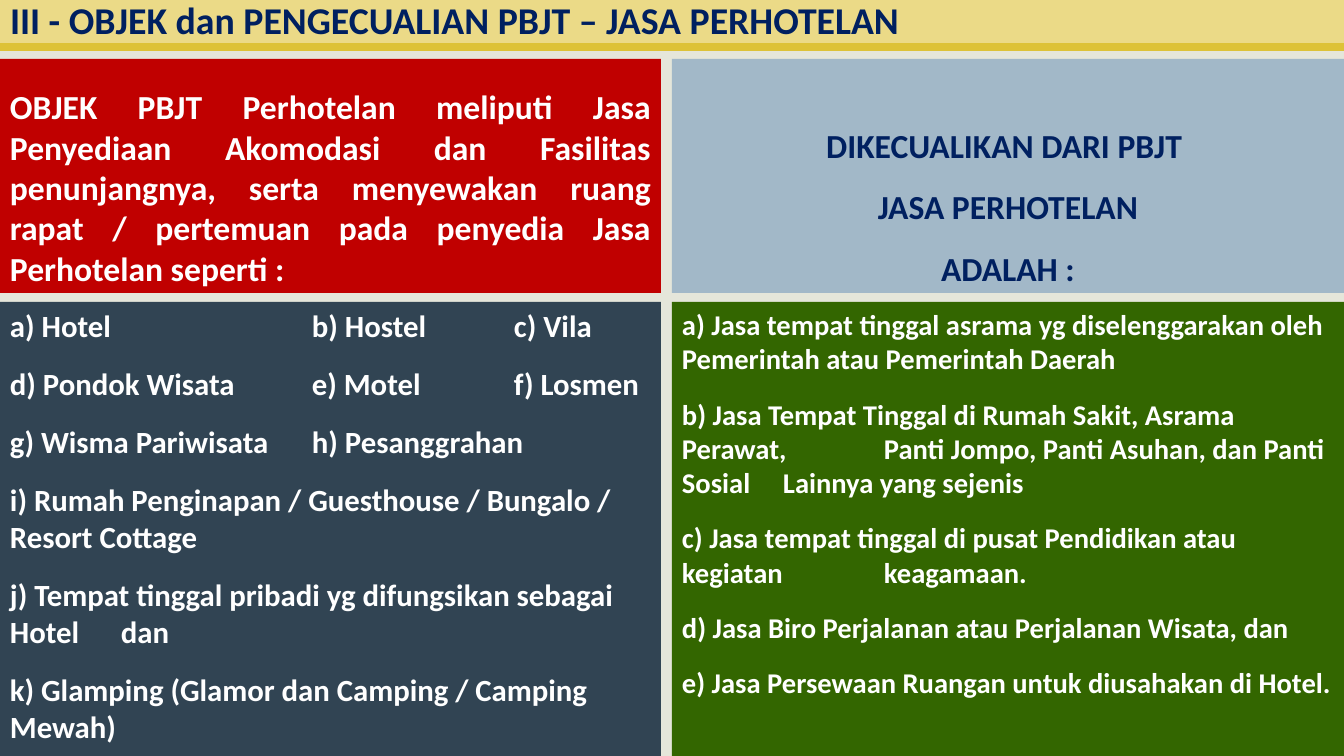
from lxml.etree import SubElement as Sub
from pptx import Presentation
from pptx.dml.color import RGBColor as RGB
from pptx.enum.shapes import MSO_SHAPE as Shape
from pptx.enum.text import MSO_ANCHOR as Anchor, PP_ALIGN as Align
from pptx.oxml.ns import qn
from pptx.util import Pt

PX = 12192000 / 1344
WIDE, HIGH = 1344, 756
CREAM = RGB(0xE5, 0xE6, 0xDA)
GOLD = RGB(0xDD, 0xC2, 0x37)
SAND = RGB(0xEB, 0xDA, 0x87)
NAVY = RGB(0x00, 0x20, 0x60)
RED = RGB(0xC0, 0x00, 0x00)
SLATE = RGB(0x31, 0x44, 0x53)
BLUE = RGB(0xA2, 0xB8, 0xC8)
GREEN = RGB(0x33, 0x66, 0x00)
WHITE = RGB(0xFF, 0xFF, 0xFF)

TITLE = "III - OBJEK dan PENGECUALIAN PBJT – JASA PERHOTELAN"
SCOPE = ["OBJEK PBJT Perhotelan meliputi Jasa Penyediaan Akomodasi dan Fasilitas "
         "penunjangnya, serta menyewakan ruang rapat / pertemuan pada penyedia "
         "Jasa Perhotelan seperti :"]
EXEMPT = ["DIKECUALIKAN DARI PBJT ", "JASA PERHOTELAN", "ADALAH :"]
HOTELS = [
    "a) Hotel\tb) Hostel\tc) Vila",
    "d) Pondok Wisata\te) Motel\tf) Losmen",
    "g) Wisma Pariwisata\th) Pesanggrahan",
    "i) Rumah Penginapan / Guesthouse / Bungalo / Resort Cottage",
    "j) Tempat tinggal pribadi yg difungsikan sebagai Hotel\tdan",
    "k) Glamping (Glamor dan Camping / Camping Mewah)",
]
OTHERS = [
    "a) Jasa tempat tinggal asrama yg diselenggarakan oleh Pemerintah atau "
    "Pemerintah Daerah",
    "b) Jasa Tempat Tinggal di Rumah Sakit, Asrama Perawat, \tPanti Jompo, "
    "Panti Asuhan, dan Panti Sosial \tLainnya yang sejenis",
    "c) Jasa tempat tinggal di pusat Pendidikan atau kegiatan \tkeagamaan.",
    "d) Jasa Biro Perjalanan atau Perjalanan Wisata, dan",
    "e) Jasa Persewaan Ruangan untuk diusahakan di Hotel.",
]
GRID = [(302, 504)] * 4 + [(111,)] + [()]
STEPS = [(101, 202)] * len(OTHERS)


def px(num):
    """Turn px into EMU."""
    return round(num * PX)


def block(slide, box, fill):
    """Draw a plain filled rectangle."""
    rect = slide.shapes.add_shape(Shape.RECTANGLE, *map(px, box))
    rect.shadow.inherit = False
    rect.fill.solid()
    rect.fill.fore_color.rgb = fill
    rect.line.fill.background()
    return rect


def panel(slide, box, fill, lines, size, ink=WHITE, align=Align.LEFT,
          anchor=Anchor.TOP, stops=()):
    """Draw a filled box with bold paragraphs and optional tab stops."""
    frame = block(slide, box, fill).text_frame
    frame.word_wrap = True
    frame.vertical_anchor = anchor
    frame.margin_left = frame.margin_right = px(10)
    frame.margin_top = frame.margin_bottom = px(5)
    for i, line in enumerate(lines):
        para = frame.paragraphs[0] if i == 0 else frame.add_paragraph()
        para.text = line
        para.alignment = align
        para.space_before = Pt(15 if i else 0)
        if stops and stops[i]:
            tabs = Sub(para._p.get_or_add_pPr(), qn("a:tabLst"))
            for stop in stops[i]:
                Sub(tabs, qn("a:tab"), pos=str(px(stop)), algn="l")
        font = para.font
        font.name, font.size, font.bold = "Calibri", Pt(size), True
        font.color.rgb = ink
    return frame


def header(slide, box):
    """Draw the title band with its gold underline."""
    left, top, wide, high = box
    block(slide, (left, top + high - 13, wide, 13), GOLD)
    frame = panel(slide, (left, top, wide, high - 8), SAND, [TITLE], 27, NAVY,
                  anchor=Anchor.MIDDLE)
    frame.paragraphs[0].line_spacing = 0.95


def column(slide, box, head, body):
    """Stack a heading panel over a list panel."""
    left, top, wide, high = box
    cap, gap = 234, 9
    panel(slide, (left, top, wide, cap), size=24, anchor=Anchor.BOTTOM, **head)
    panel(slide, (left, top + cap + gap, wide, high - cap - gap), **body)


def main():
    """Build and save the slide."""
    deck = Presentation()
    deck.slide_width, deck.slide_height = px(WIDE), px(HIGH)
    slide = deck.slides.add_slide(deck.slide_layouts[6])
    slide.background.fill.solid()
    slide.background.fill.fore_color.rgb = CREAM
    header(slide, (0, 0, WIDE, 51))
    top, split, right = 59, 661, 672
    column(slide, (0, top, split, HIGH - top),
           dict(fill=RED, lines=SCOPE, align=Align.JUSTIFY),
           dict(fill=SLATE, lines=HOTELS, size=22, stops=GRID))
    column(slide, (right, top, WIDE - right, HIGH - top),
           dict(fill=BLUE, lines=EXEMPT, ink=NAVY, align=Align.CENTER),
           dict(fill=GREEN, lines=OTHERS, size=20.4, stops=STEPS))
    deck.save("out.pptx")


if __name__ == "__main__":
    main()
